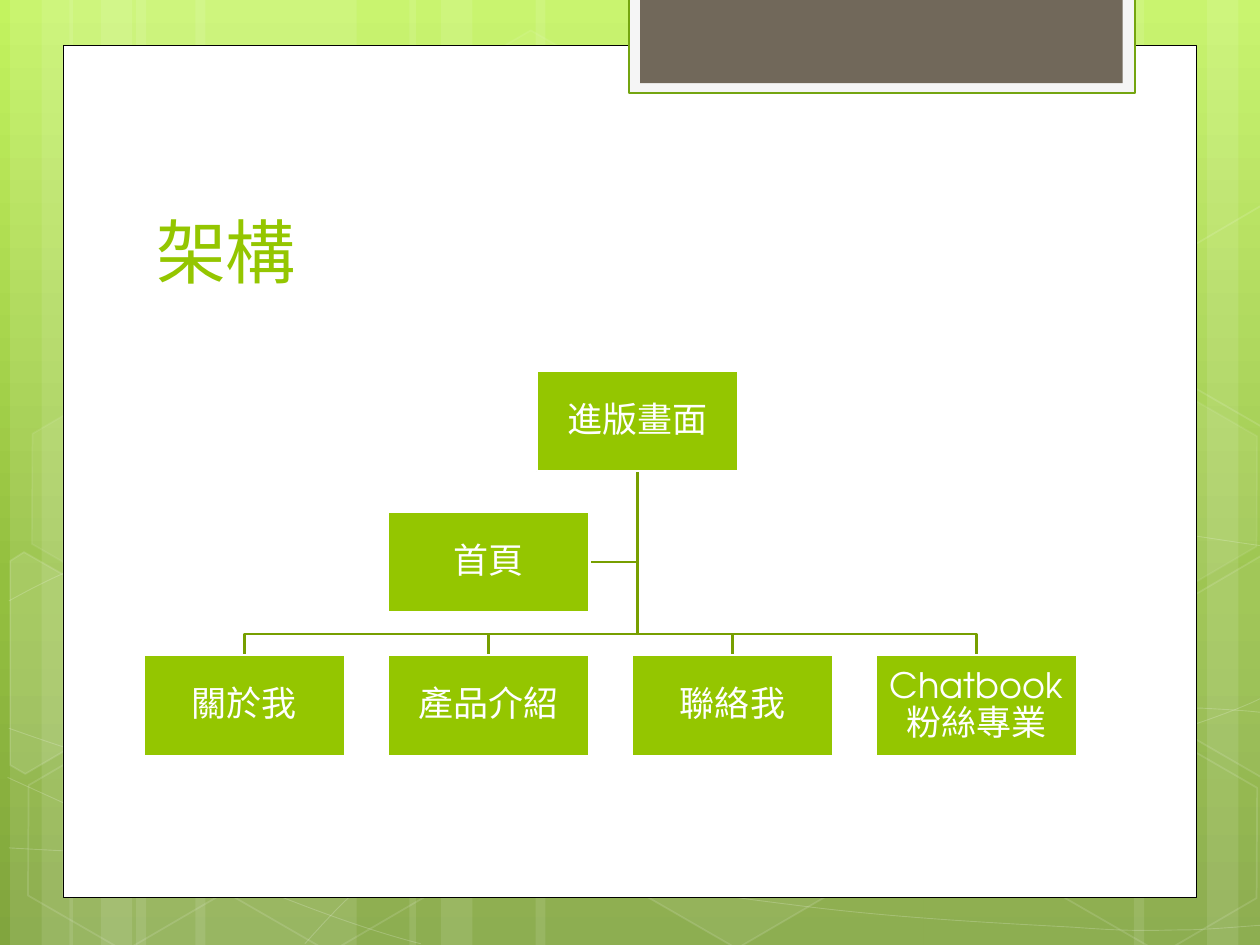
import copy
import math
from dataclasses import dataclass
from typing import Optional

import pptx
import pptx.dml.color
import pptx.enum.shapes
import pptx.enum.text
import pptx.oxml
import pptx.oxml.ns
import pptx.util
from lxml import etree
from pptx.util import Inches

RGB = pptx.dml.color.RGBColor
KIND = pptx.enum.shapes.MSO_SHAPE
ALIGN = pptx.enum.text.PP_ALIGN
ANCHOR = pptx.enum.text.MSO_ANCHOR
qn = pptx.oxml.ns.qn

WHITE = RGB(0xFF, 0xFF, 0xFF)
BLACK = RGB(0x00, 0x00, 0x00)
PALE = RGB(0xF5, 0xF5, 0xF5)
BROWN = RGB(0x71, 0x68, 0x5A)
GREEN = RGB(0x94, 0xC6, 0x00)
EDGE = RGB(0x74, 0xA5, 0x10)
LINK = RGB(0x77, 0x9F, 0x00)
SKY = [(0, RGB(0xC3, 0xF3, 0x5F)), (0.62, RGB(0x93, 0xBF, 0x3F)),
       (1, RGB(0x81, 0xA5, 0x3E))]
FONT = "TeX Gyre Adventor"
TILT = 30


@dataclass
class Style:
    """Fill and line, with opacity in percent."""
    fill: Optional[RGB] = None
    line: Optional[RGB] = None
    width: float = 1
    fill_op: int = 100
    line_op: int = 100


@dataclass
class Hex:
    left: float
    top: float
    style: Style


@dataclass
class Cut:
    """A hexagon cut by the slide edge: its middle and its corners."""
    mid: tuple[float, float]
    points: list[tuple]
    style: Style


@dataclass
class Node:
    text: str
    left: float
    top: float


def fade(part, percent: int) -> None:
    """Give every colour under a fill or line element an opacity."""
    if percent < 100:
        for color in part.iter(qn("a:srgbClr")):
            etree.SubElement(color, qn("a:alpha"), val=str(percent * 1000))


def paint(shape, style: Style):
    shape.shadow.inherit = False
    props = shape.element.spPr
    if style.fill is None:
        shape.fill.background()
    else:
        shape.fill.solid()
        shape.fill.fore_color.rgb = style.fill
        fade(props.find(qn("a:solidFill")), style.fill_op)
    if style.line is None:
        shape.line.fill.background()
    else:
        shape.line.color.rgb = style.line
        shape.line.width = pptx.util.Pt(style.width)
        fade(props.find(qn("a:ln")), style.line_op)
    return shape


def block(slide, left: float, top: float, width: float, height: float,
          style: Style, kind=KIND.RECTANGLE):
    shape = slide.shapes.add_shape(
        kind, Inches(left), Inches(top), Inches(width), Inches(height))
    return paint(shape, style)


def trace(slide, parts: list[tuple], style: Style, close: bool = False):
    """Draw a path; a part of two numbers is a line, of six a Bezier curve."""
    ends = [(Inches(part[-2]), Inches(part[-1])) for part in parts]
    pen = slide.shapes.build_freeform(*ends[0])
    pen.add_line_segments(ends[1:], close=close)
    shape = pen.convert_to_shape()
    for step, part in zip(list(shape.element.iter(qn("a:lnTo"))), parts[1:]):
        if len(part) == 6:
            curve = etree.Element(qn("a:cubicBezTo"))
            for x, y in zip(part[::2], part[1::2]):
                etree.SubElement(curve, qn("a:pt"), x=str(Inches(x) - shape.left),
                                 y=str(Inches(y) - shape.top))
            step.getparent().replace(step, curve)
    return paint(shape, style)


def turn(point: tuple, mid: tuple[float, float], angle: float) -> tuple:
    a = math.radians(angle)
    dx, dy = point[0] - mid[0], point[1] - mid[1]
    return (mid[0] + dx * math.cos(a) - dy * math.sin(a),
            mid[1] + dx * math.sin(a) + dy * math.cos(a))


def write(shape, text: str, *, size: float, color: RGB, align=ALIGN.LEFT,
          anchor=ANCHOR.MIDDLE, inset: Optional[float] = None,
          space: float = 1) -> None:
    frame = shape.text_frame
    frame.word_wrap = True
    frame.vertical_anchor = anchor
    if inset is not None:
        frame.margin_left = frame.margin_right = Inches(inset)
        frame.margin_top = frame.margin_bottom = Inches(inset)
    para = frame.paragraphs[0]
    para.alignment = align
    para.line_spacing = space
    run = para.add_run()
    run.text = text
    run.font.name = FONT
    run.font.size = pptx.util.Pt(size)
    run.font.color.rgb = color


# Backdrop parts: stripes, curves and hexagons
STRIPES = [(1.08, 1.75), (0.08, 0.5), (0.33, 0.83), (1.55, 1.75), (0.55, 0.5),
           (0.8, 0.83), (7.33, 1.75), (9.58, 0.5), (9, 0.83), (4.25, 3.08),
           (3.25, 0.5), (3.5, 0.83)]
CURVES = [
    [(0.07, 6.73), (0.61, 6.76, 1.15, 6.79, 1.9, 6.78),
     (2.65, 6.77, 3.58, 6.75, 4.58, 6.65), (5.58, 6.55, 7, 6.36, 7.92, 6.17),
     (8.83, 5.98, 9.77, 5.68, 10.07, 5.51)],
    [(0.07, 4.77), (0.36, 4.61, 0.65, 4.46, 1.21, 4.31),
     (1.78, 4.16, 2.59, 3.94, 3.47, 3.87), (4.36, 3.8, 5.44, 3.79, 6.54, 3.87),
     (7.64, 3.95, 9.47, 4.26, 10.07, 4.34)],
    [(0.06, 6.17), (1.27, 6.72, 2.47, 7.27, 3.34, 7.49)],
    [(0.07, 5.78), (0.38, 5.89, 0.7, 6, 1.28, 6.16),
     (1.86, 6.31, 2.73, 6.56, 3.57, 6.73), (4.4, 6.9, 5.45, 7.08, 6.28, 7.18),
     (7.11, 7.29, 8, 7.33, 8.53, 7.36), (9.05, 7.4, 9.19, 7.38, 9.45, 7.38),
     (9.71, 7.37, 9.89, 7.35, 10.07, 7.34)],
    [(2.42, 7.49), (2.6, 7.29, 2.78, 7.09, 3.02, 6.91),
     (3.26, 6.73, 3.6, 6.53, 3.88, 6.39), (4.16, 6.25, 4.33, 6.19, 4.7, 6.09),
     (5.06, 5.99, 5.73, 5.85, 6.08, 5.78), (6.44, 5.71, 6.49, 5.71, 6.8, 5.69),
     (7.11, 5.66, 7.6, 5.63, 7.94, 5.62), (8.29, 5.61, 8.86, 5.62, 8.86, 5.62),
     (9.53, 5.62), (9.71, 5.63, 9.88, 5.64, 9.97, 5.65),
     (10.06, 5.66, 10.03, 5.65, 10.06, 5.66)],
]
STRIPE = Style(WHITE, fill_op=10)
CURVE = Style(line=WHITE, width=0.5, line_op=20)
RING = Style(line=WHITE, line_op=12)
SOFT = Style(WHITE, WHITE, fill_op=7, line_op=8)
HEXES = [Hex(3.34, 0.36, Style(WHITE, WHITE, fill_op=4, line_op=8)),
         Hex(4.97, 5.89, Style(WHITE, WHITE, fill_op=6, line_op=12)),
         Hex(0.11, 5.91, RING), Hex(0.14, 3.12, SOFT), Hex(1.74, 5.92, RING),
         Hex(8.34, 5.93, RING), Hex(8.34, 3.14, SOFT)]
LEFT = [(0.08, 4.45), (0.19, 4.38), (0.96, 4.82), (0.95, 5.7), (0.2, 6.14), (0.08, 6.07)]
RIGHT = [(9.26, 4.85), (10.01, 4.41), (10.09, 4.46), (10.09, 6.13), (10.02, 6.17),
         (9.26, 5.73)]
CUTS = [Cut((0.36, 5.35), LEFT, Style(WHITE, WHITE, fill_op=10, line_op=12)),
        Cut((9.85, 5.2), RIGHT, Style(WHITE, WHITE, fill_op=4, line_op=12)),
        Cut((9.85, 2.41), [(x, y - 2.78) for x, y in RIGHT], RING)]

# Chart of pages
WIDE, HIGH, STEP = 1.6, 0.8, 1.937
ROOT = Node("進版畫面", 4.26, 2.94)
SIDE = Node("首頁", 3.08, 4.06)
LEAVES = [Node(text, 1.14 + i * STEP, 5.2) for i, text in
          enumerate(["關於我", "產品介紹", "聯絡我", "Chatbook粉絲專業"])]


def backdrop(slide) -> None:
    fill = slide.background.fill
    fill.gradient()
    fill.gradient_angle = 270
    stops = slide.element.find(".//" + qn("a:gsLst"))
    stops.append(copy.deepcopy(stops[-1]))
    for stop, (place, color) in zip(fill.gradient_stops, SKY):
        stop.position = place
        stop.color.rgb = color
    for left, width in STRIPES:
        block(slide, left, 0, width, 7.5, STRIPE)
    for curve in CURVES:
        trace(slide, curve, CURVE)
    for item in HEXES:
        shape = block(slide, item.left, item.top, 1.75, 1.52, item.style, KIND.HEXAGON)
        shape.adjustments[0] = 0.285
        shape.rotation = TILT
    for cut in CUTS:
        flat = [turn(point, cut.mid, -TILT) for point in cut.points]
        trace(slide, flat, cut.style, close=True).rotation = TILT


def tree(slide) -> None:
    mid, base, bus = ROOT.left + WIDE / 2, ROOT.top + HIGH, 5.03
    line = Style(line=LINK, width=1.25)
    level = SIDE.top + HIGH / 2
    trace(slide, [(mid, base), (mid, level), (SIDE.left + WIDE, level)], line)
    for leaf in reversed(LEAVES):
        end = leaf.left + WIDE / 2
        trace(slide, [(mid, base), (mid, bus), (end, bus), (end, leaf.top)], line)
    for node in [ROOT, *LEAVES, SIDE]:
        shape = block(slide, node.left, node.top, WIDE, HIGH, Style(GREEN, WHITE, 1.25))
        write(shape, node.text, size=20, color=WHITE, align=ALIGN.CENTER,
              inset=0.01, space=0.9)


deck = pptx.Presentation()
deck.slide_width, deck.slide_height = Inches(10), Inches(7.5)
page = deck.slides.add_slide(deck.slide_layouts[6])
backdrop(page)
# White panel and top tab
block(page, 0.5, 0.36, 9, 6.76, Style(WHITE, BLACK, 0.5))
block(page, 4.99, -0.02, 4.02, 0.76, Style(PALE, EDGE, 1.25))
block(page, 5.08, -0.02, 3.83, 0.68, Style(BROWN))
# Title and chart
title = page.shapes.add_textbox(Inches(1.14), Inches(1.12), Inches(7.68), Inches(1.25))
write(title, "架構", size=40, color=GREEN, anchor=ANCHOR.BOTTOM)
tree(page)
deck.save("out.pptx")
